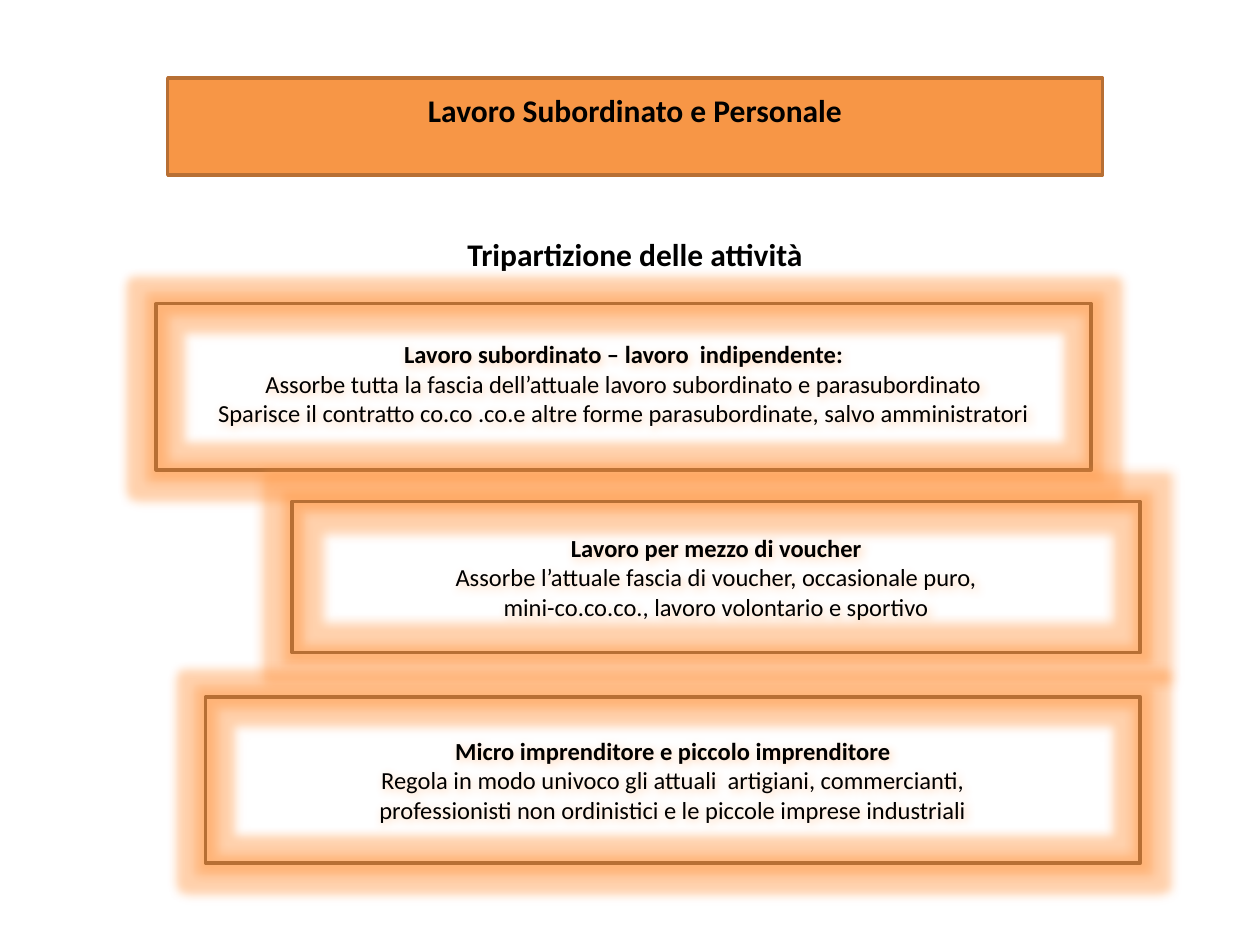
from lxml.etree import SubElement
from pptx import Presentation
from pptx.dml.color import RGBColor
from pptx.enum.shapes import MSO_SHAPE
from pptx.enum.text import MSO_ANCHOR, PP_ALIGN
from pptx.oxml.ns import qn
from pptx.util import Pt

ORANGE = "F79646"
BORDER = "B76F34"
GLOW = "FF9641"
BLACK = "000000"

ACTIVITIES = [
    ((89.3, 173.5, 534.2, 95), 20.4, MSO_ANCHOR.TOP, [
        "Lavoro subordinato – lavoro  indipendente:",
        "Assorbe tutta la fascia dell’attuale lavoro subordinato e parasubordinato",
        "Sparisce il contratto co.co .co.e altre forme parasubordinate, salvo amministratori",
    ]),
    ((167, 286.6, 484.6, 86.4), 3.6, MSO_ANCHOR.MIDDLE, [
        "Lavoro per mezzo di voucher",
        "Assorbe l’attuale fascia di voucher, occasionale puro,",
        "mini-co.co.co., lavoro volontario e sportivo",
    ]),
    ((117.4, 398.2, 534.2, 95), 3.6, MSO_ANCHOR.MIDDLE, [
        "Micro imprenditore e piccolo imprenditore",
        "Regola in modo univoco gli attuali  artigiani, commercianti,",
        "professionisti non ordinistici e le piccole imprese industriali",
    ]),
]


def color(value):
    """Return the colour for a hex string."""
    return RGBColor.from_string(value)


def place(shape, box):
    """Put a shape at left, top, width and height in points."""
    shape.left, shape.top, shape.width, shape.height = map(Pt, box)


def write(shape, lines, size, anchor=MSO_ANCHOR.MIDDLE):
    """Write centred lines with the first one in bold."""
    frame = shape.text_frame
    frame.text = "\n".join(lines)
    frame.word_wrap = True
    frame.vertical_anchor = anchor
    for index, paragraph in enumerate(frame.paragraphs):
        paragraph.alignment = PP_ALIGN.CENTER
        for run in paragraph.runs:
            run.font.name = "Calibri"
            run.font.size = Pt(size)
            run.font.bold = index == 0
            run.font.color.rgb = color(BLACK)


def outline(shape):
    """Give a shape the brown border."""
    shape.line.color.rgb = color(BORDER)
    shape.line.width = Pt(2)


def add_effect(effects, name, **attributes):
    """Add a translucent orange effect to an effect list."""
    effect = SubElement(effects, qn(name), {key: str(value) for key, value in attributes.items()})
    tint = SubElement(effect, qn("a:srgbClr"), val=GLOW)
    SubElement(tint, qn("a:alpha"), val="40000")


def add_title(slide):
    """Format the title as an orange bar."""
    title = slide.shapes.title
    place(title, (95.8, 44.6, 534.2, 55.4))
    title.fill.solid()
    title.fill.fore_color.rgb = color(ORANGE)
    outline(title)
    write(title, ["Lavoro Subordinato e Personale"], 18)
    title.text_frame.margin_bottom = Pt(23)


def add_subtitle(slide):
    """Add the heading above the boxes."""
    subtitle = slide.shapes.add_textbox(*map(Pt, (95.8, 131, 534.2, 28.8)))
    write(subtitle, ["Tripartizione delle attività"], 18, MSO_ANCHOR.TOP)


def add_activity(slide, box, top_margin, anchor, lines):
    """Add a glowing outlined box with an activity."""
    shape = slide.shapes.add_shape(MSO_SHAPE.RECTANGLE, *map(Pt, box))
    shape.fill.background()
    outline(shape)
    shape.shadow.inherit = False
    effects = shape.element.spPr.find(qn("a:effectLst"))
    add_effect(effects, "a:glow", rad=Pt(11))
    add_effect(effects, "a:outerShdw", blurRad=Pt(5), dist=Pt(2), dir=2700000)
    write(shape, lines, 14, anchor)
    shape.text_frame.margin_top = Pt(top_margin)


def main():
    """Build and save the slide."""
    presentation = Presentation()
    presentation.slide_width, presentation.slide_height = Pt(720), Pt(540)
    slide = presentation.slides.add_slide(presentation.slide_layouts[5])
    add_title(slide)
    add_subtitle(slide)
    for activity in ACTIVITIES:
        add_activity(slide, *activity)
    presentation.save("out.pptx")


if __name__ == "__main__":
    main()
